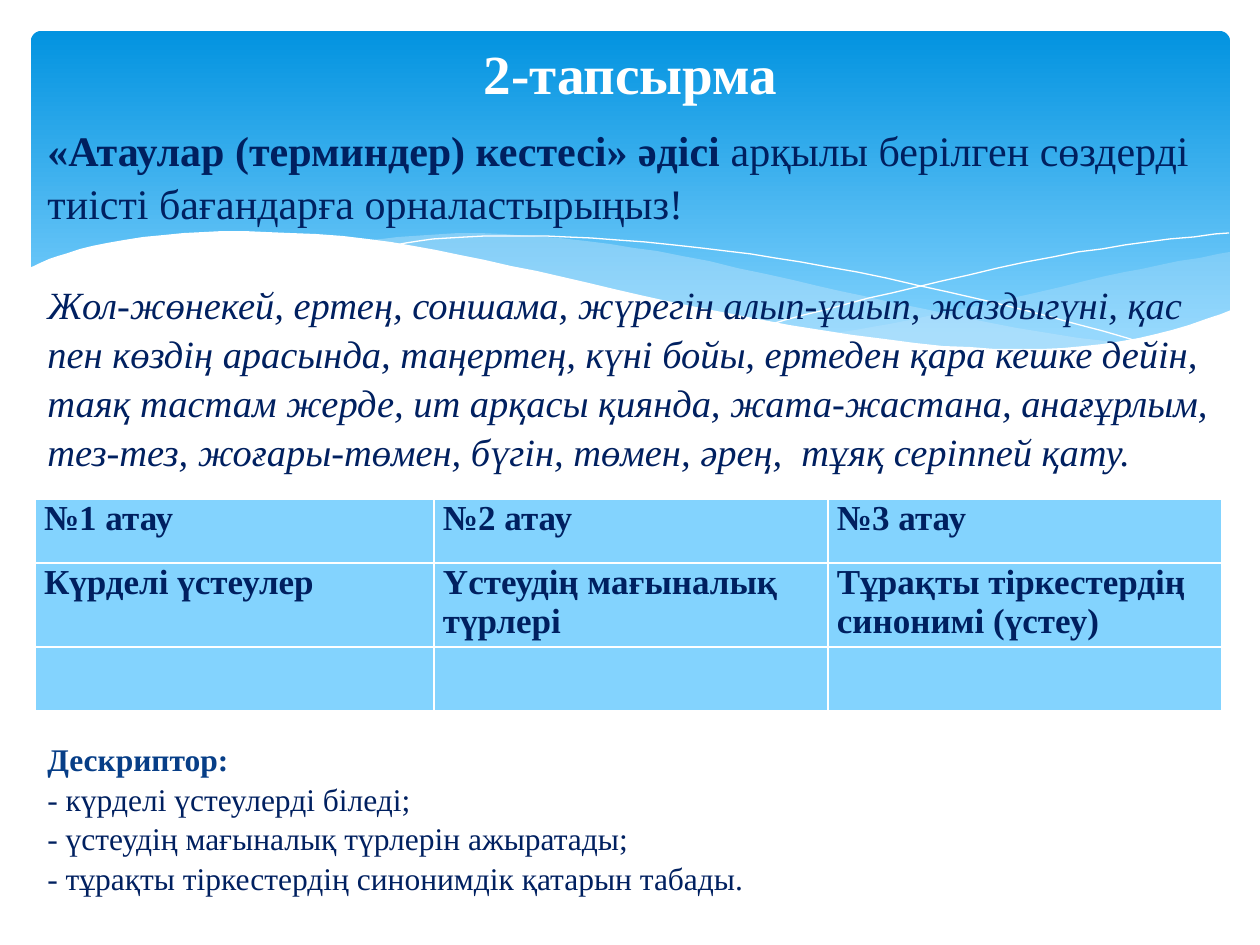
from lxml import etree
from pptx import Presentation
from pptx.dml.color import RGBColor
from pptx.enum.shapes import MSO_SHAPE
from pptx.enum.text import MSO_ANCHOR, MSO_AUTO_SIZE, PP_ALIGN
from pptx.oxml.ns import qn
from pptx.util import Inches, Pt

ROUND_RECT = MSO_SHAPE.ROUNDED_RECTANGLE
LEFT, CENTER, JUSTIFY = PP_ALIGN.LEFT, PP_ALIGN.CENTER, PP_ALIGN.JUSTIFY
PX = Inches(1) / 126
FONT = "Times New Roman"
COLORS = {"sky": "0293E0", "pale": "83D3FE", "mist": "C6E7FC", "white": "FFFFFF",
          "navy": "002060", "blue": "073E87"}

# Content
TITLE = "2-тапсырма"
TASK = [("«Атаулар (терминдер) кестесі» әдісі ", True),
        ("арқылы берілген сөздерді тиісті бағандарға орналастырыңыз!", False)]
WORDS = ("Жол-жөнекей, ертең, соншама, жүрегін алып-ұшып, жаздыгүні, қас пен көздің "
         "арасында, таңертең, күні бойы, ертеден қара кешке дейін, таяқ тастам жерде, "
         "ит арқасы қиянда, жата-жастана, анағұрлым, тез-тез, жоғары-төмен, бүгін, "
         "төмен, әрең,  тұяқ серіппей қату.")
TABLE = [["№1 атау", "№2 атау", "№3 атау"],
         ["Күрделі үстеулер", "Үстеудің мағыналық түрлері",
          "Тұрақты тіркестердің синонимі (үстеу)"],
         ["", "", ""]]
COLUMN_WIDTHS = [399, 394, 394]
ROW_HEIGHTS = [64, 84, 64]
DESCRIPTOR = ["Дескриптор:",
              "- күрделі үстеулерді біледі;",
              "- үстеудің мағыналық түрлерін ажыратады;",
              "- тұрақты тіркестердің синонимдік қатарын табады."]

# Waves from back to front: curves joined at corners, fill, opacity in percent
WAVES = [
    ([[(1230, 252), (1160, 265), (1085, 281), (982, 305), (890, 324), (833, 334)],
      [(833, 334), (906, 343), (984, 349), (1052, 349), (1120, 343), (1178, 330),
       (1230, 311)]], "mist", 29),
    ([[(1125, 344), (1017, 328), (890, 302), (793, 280), (682, 256), (586, 241),
       (479, 233), (413, 236), (360, 241)],
      [(360, 241), (456, 256), (566, 280), (668, 302), (779, 325), (876, 340),
       (974, 349), (1043, 350), (1125, 344)]], "mist", 40),
    ([[(389, 246), (433, 239), (505, 236), (591, 238), (701, 248), (801, 262),
       (916, 285), (1047, 316), (1143, 343)]], None, 100),
    ([[(772, 324), (847, 304), (942, 281), (1053, 257), (1147, 242), (1229, 233)]],
     None, 100),
    ([[(1231, 310), (1172, 330), (1103, 344), (1019, 349), (915, 343), (789, 325),
       (667, 301), (563, 277), (460, 255), (368, 239), (266, 232), (184, 233),
       (107, 243), (58, 256), (29, 268)],
      [(29, 415), (1231, 415)]], "white", 100),
]


def px(*lengths):
    return [round(length * PX) for length in lengths]


def color(name):
    return RGBColor.from_string(COLORS[name])


def smooth(points, steps=4):
    """Catmull-Rom curve through the points."""
    padded = [points[0], *points, points[-1]]
    curve = [points[0]]
    for a, b, c, d in zip(padded, padded[1:], padded[2:], padded[3:]):
        for step in range(1, steps + 1):
            t = step / steps
            curve.append(tuple(
                (2 * q + (r - p) * t + (2 * p - 5 * q + 4 * r - s) * t ** 2
                 + (3 * q - p - 3 * r + s) * t ** 3) / 2
                for p, q, r, s in zip(a, b, c, d)))
    return curve


def add_wave(page, curves, fill, opacity):
    points = [point for curve in curves for point in smooth(curve)]
    builder = page.shapes.build_freeform(*points[0], scale=PX)
    builder.add_line_segments(points[1:], close=fill is not None)
    wave = builder.convert_to_shape()
    wave.shadow.inherit = False
    if fill is None:
        wave.fill.background()
        wave.line.color.rgb = color("white")
        wave.line.width = Pt(0)
        return
    wave.fill.solid()
    wave.fill.fore_color.rgb = color(fill)
    wave.line.fill.background()
    if opacity < 100:
        tint = wave.fill._xPr.find(".//" + qn("a:srgbClr"))
        etree.SubElement(tint, qn("a:alpha"), val=str(opacity * 1000))


def style(span, size, name="navy", bold=False, italic=False):
    font = span.font
    font.name, font.size, font.bold, font.italic = FONT, Pt(size), bold, italic
    font.color.rgb = color(name)


def add_text(page, frame, text, spacing):
    box = page.shapes.add_textbox(*px(*frame))
    box.text_frame.word_wrap = True
    box.text_frame.text = text
    for para in box.text_frame.paragraphs:
        para.line_spacing = spacing
    return box.text_frame.paragraphs


def main():
    deck = Presentation()
    deck.slide_width, deck.slide_height = Inches(10), Inches(7.5)
    page = deck.slides.add_slide(deck.slide_layouts[5])

    # Banner and waves
    banner = page.shapes.add_shape(ROUND_RECT, *px(31, 31, 1199, 340))
    banner.adjustments[0] = 0.03
    banner.shadow.inherit = False
    banner.line.fill.background()
    banner.fill.gradient()
    banner.fill.gradient_angle = 270
    for stop, (name, position) in zip(banner.fill.gradient_stops,
                                      [("sky", 0), ("pale", 0.9)]):
        stop.color.rgb = color(name)
        stop.position = position
    for wave in WAVES:
        add_wave(page, *wave)

    # Title, raised above the banner
    title = page.shapes.title
    page.shapes._spTree.append(title._element)
    title.left, title.top, title.width, title.height = px(64, 40, 1133, 64)
    title.text_frame.text = TITLE
    title.text_frame.auto_size = MSO_AUTO_SIZE.NONE
    title.text_frame.vertical_anchor = MSO_ANCHOR.MIDDLE
    para = title.text_frame.paragraphs[0]
    para.alignment = CENTER
    style(para.runs[0], 31.5, "white", bold=True)

    # Descriptor
    lines = add_text(page, (35, 732, 1119, 165), "\n".join(DESCRIPTOR), 1.05)
    for index, para in enumerate(lines):
        heading = index == 0
        style(para.runs[0], 18, "blue" if heading else "navy", bold=heading)

    # Task and word list
    task, words = add_text(page, (35, 115, 1191, 352), "\n" + WORDS, 1.06)
    for text, bold in TASK:
        span = task.add_run()
        span.text = text
        style(span, 24, bold=bold)
    words.space_before = Pt(29)
    style(words.runs[0], 22, italic=True)

    # Table
    table = page.shapes.add_table(
        len(TABLE), len(COLUMN_WIDTHS),
        *px(35, 499, sum(COLUMN_WIDTHS), sum(ROW_HEIGHTS))).table
    table.horz_banding = False
    for column, width in zip(table.columns, px(*COLUMN_WIDTHS)):
        column.width = width
    for row, height, texts in zip(table.rows, px(*ROW_HEIGHTS), TABLE):
        row.height = height
        for cell, text in zip(row.cells, texts):
            cell.fill.solid()
            cell.fill.fore_color.rgb = color("pale")
            cell.margin_left = cell.margin_right = px(9)[0]
            cell.margin_top = cell.margin_bottom = 0
            if text:
                cell.text_frame.text = text
                para = cell.text_frame.paragraphs[0]
                para.alignment = JUSTIFY if texts is TABLE[0] else LEFT
                style(para.runs[0], 20, bold=True)

    deck.save("out.pptx")


if __name__ == "__main__":
    main()
